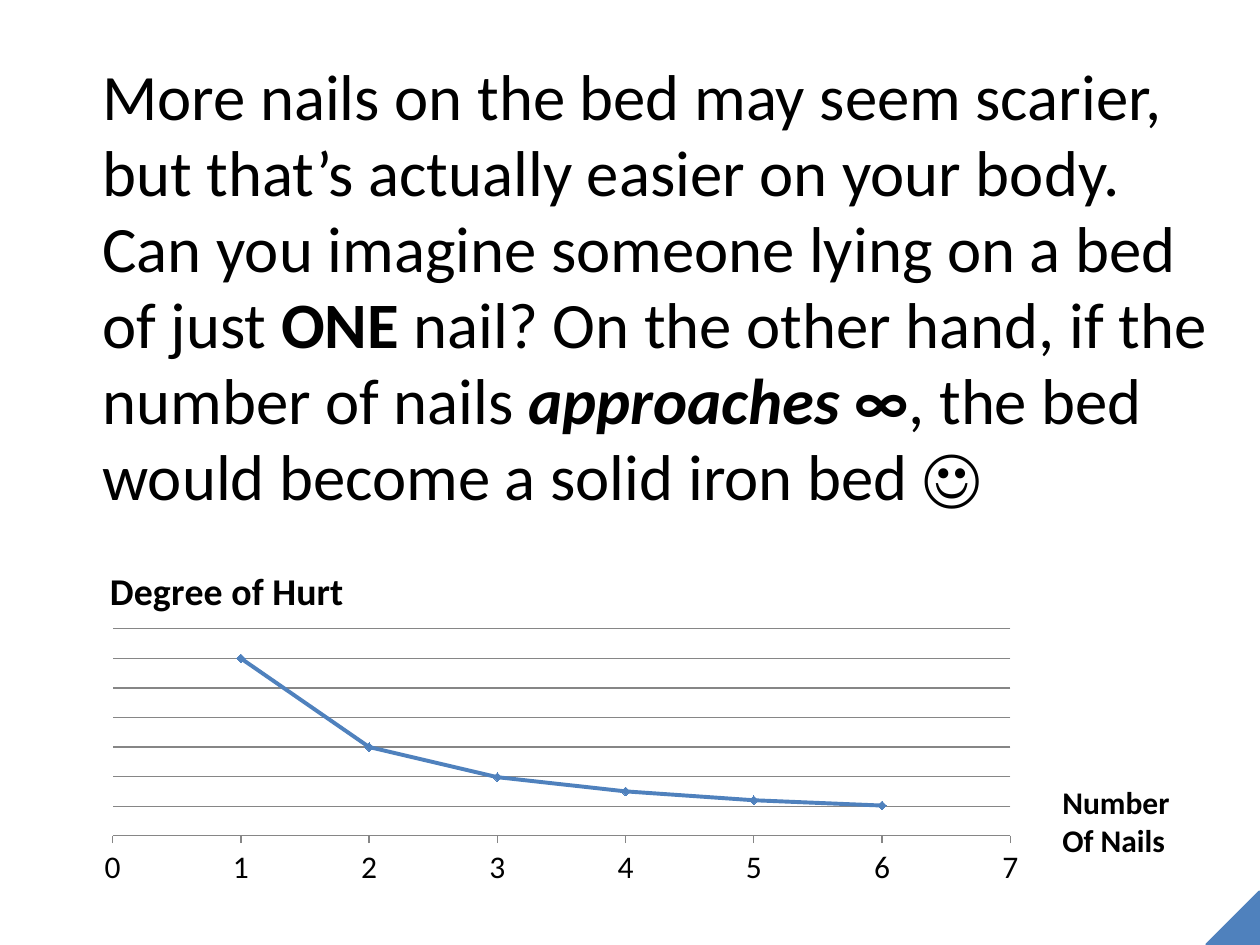
from lxml.etree import SubElement
from pptx import Presentation
from pptx.chart.data import XyChartData
from pptx.dml.color import RGBColor
from pptx.enum.chart import XL_CHART_TYPE as Kind, XL_MARKER_STYLE as Mark
from pptx.enum.chart import XL_TICK_LABEL_POSITION as Label, XL_TICK_MARK as Tick
from pptx.enum.shapes import MSO_SHAPE as Shape
from pptx.oxml import parse_xml
from pptx.oxml.ns import nsdecls, qn
from pptx.util import Pt

PX = 914400 / 126
FONT = "Calibri"
BLACK = RGBColor(0x00, 0x00, 0x00)
BLUE = RGBColor(0x4F, 0x81, 0xBD)
GREY = RGBColor(0x86, 0x86, 0x86)

BODY = [
    ("\t", 33.3, False, False),
    ("More nails on the bed may seem scarier, but that’s actually easier on "
     "your body. Can you imagine someone lying on a bed of just ", 37, False, False),
    ("ONE", 37, True, False),
    (" nail? On the other hand, if the number of nails ", 37, False, False),
    ("approaches ", 37, True, True),
    ("∞", 37, True, False),
    (", the bed would become a solid iron bed ☺", 37, False, False),
]
HURT = [100, 50, 33, 25, 20, 17]
STEP = 16.67


def emu(*nums):
    return [round(n * PX) for n in nums]


def style(font, size, bold=False, italic=False):
    font.name, font.size = FONT, Pt(size)
    font.bold, font.italic = bold, italic
    font.color.rgb = BLACK


def add_text(slide, box, paras):
    frame = slide.shapes.add_textbox(*emu(*box)).text_frame
    frame.word_wrap = True
    for i, runs in enumerate(paras):
        para = frame.add_paragraph() if i else frame.paragraphs[0]
        for text, *look in runs:
            run = para.add_run()
            run.text = text
            style(run.font, *look)
    return frame


def hang(para, indent):
    """Indent all lines but the first."""
    props = para._p.get_or_add_pPr()
    props.set("marL", str(indent))
    props.set("indent", str(-indent))


def place(elem, **spots):
    """Fix a chart part at fractions of the chart's size."""
    for old in elem.findall(qn("c:layout")):
        elem.remove(old)
    layout = parse_xml(f"<c:layout {nsdecls('c')}/>")
    manual = SubElement(layout, qn("c:manualLayout"))
    for key, val in spots.items():
        SubElement(manual, qn(f"c:{key}")).set("val", str(val))
    text = elem.find(qn("c:tx"))
    elem.insert(0 if text is None else 1, layout)


def add_title(chart, text):
    title = chart.chart_title
    run = title.text_frame.paragraphs[0].add_run()
    run.text = text
    style(run.font, 21.6, True)
    title.include_in_layout = False
    place(title._element, xMode="edge", yMode="edge", x=0.02, y=0.06)


def set_axes(chart):
    nails, hurt = chart.category_axis, chart.value_axis
    for axis, step in (nails, 1), (hurt, STEP):
        axis.minimum_scale, axis.maximum_scale = 0, 7 * step
        axis.major_unit = step
        axis.format.line.color.rgb = GREY
        axis.format.line.width = Pt(0.75)
    nails.has_major_gridlines = False
    nails.major_tick_mark, nails.minor_tick_mark = Tick.OUTSIDE, Tick.NONE
    nails.tick_label_position = Label.NEXT_TO_AXIS
    nails.tick_labels.number_format = "General"
    nails.tick_labels.number_format_is_linked = False
    hurt.visible = False
    hurt.has_major_gridlines = True
    grid = hurt.major_gridlines.format.line
    grid.color.rgb, grid.width = GREY, Pt(0.75)


def add_curve(slide, box):
    data = XyChartData()
    series = data.add_series("Series 1")
    for count, hurt in enumerate(HURT, 1):
        series.add_data_point(count, hurt)
    chart = slide.shapes.add_chart(Kind.XY_SCATTER_SMOOTH, *emu(*box), data).chart
    chart.has_legend = False
    style(chart.font, 18)
    add_title(chart, "Degree of Hurt")
    set_axes(chart)
    plot = chart.plots[0]
    plot.vary_by_categories = False
    line = plot.series[0]
    line.smooth = True
    line.format.line.color.rgb, line.format.line.width = BLUE, Pt(2.25)
    line.marker.style, line.marker.size = Mark.DIAMOND, 5
    line.marker.format.fill.solid()
    line.marker.format.fill.fore_color.rgb = BLUE
    line.marker.format.line.color.rgb = BLUE
    place(chart._chartSpace.chart.plotArea, layoutTarget="inner", xMode="edge",
          yMode="edge", x=0.03, y=0.26, w=0.94, h=0.58)


def add_corner(slide, box):
    shape = slide.shapes.add_shape(Shape.RIGHT_TRIANGLE, *emu(*box))
    shape.rotation = 270
    shape.shadow.inherit = False
    shape.fill.solid()
    shape.fill.fore_color.rgb = BLUE
    shape.line.color.rgb, shape.line.width = BLUE, Pt(2)


def main():
    deck = Presentation()
    deck.slide_width, deck.slide_height = emu(1260, 945)
    slide = deck.slides.add_slide(deck.slide_layouts[6])
    para = add_text(slide, (42, 53, 1187, 504), [BODY]).paragraphs[0]
    hang(para, emu(48)[0])
    para.space_before, para.line_spacing = Pt(7.4), 0.98
    add_curve(slide, (84, 536, 955, 357))
    add_text(slide, (1050, 777, 136, 89),
             [[("Number", 18, True)], [("Of Nails", 18, True)]])
    add_corner(slide, (1207, 892, 53, 53))
    deck.save("out.pptx")


if __name__ == "__main__":
    main()
